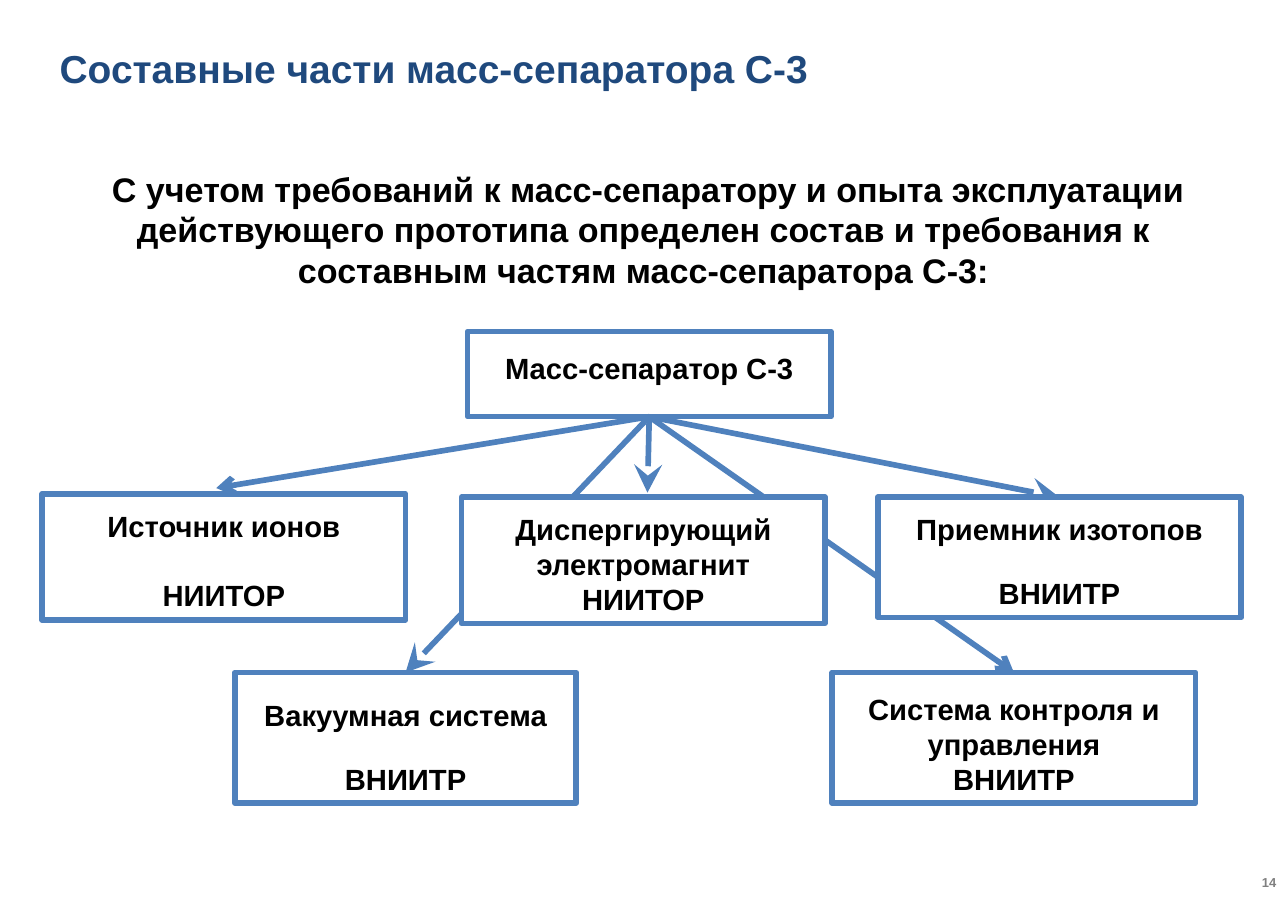
from lxml import etree
from pptx import Presentation
from pptx.dml.color import RGBColor
from pptx.enum.shapes import MSO_CONNECTOR, MSO_SHAPE
from pptx.enum.text import MSO_ANCHOR, PP_ALIGN
from pptx.oxml.ns import qn
from pptx.util import Inches, Pt

LINE, RECT = MSO_CONNECTOR.STRAIGHT, MSO_SHAPE.RECTANGLE
TOP, MIDDLE = MSO_ANCHOR.TOP, MSO_ANCHOR.MIDDLE
LEFT, CENTER, RIGHT = PP_ALIGN.LEFT, PP_ALIGN.CENTER, PP_ALIGN.RIGHT
WIDE, HIGH = Pt(793.8), Pt(567)
COLORS = {"title": "1F497D", "text": "000000", "edge": "4F81BD",
          "fill": "FFFFFF", "number": "808080"}
FONT = {"name": "Arial", "bold": True}
SIDES = ("margin_left", "margin_top", "margin_right", "margin_bottom")
BOX_W = 28.22
ROW = 54.06
LOW = 73.1


def color(key):
    return RGBColor.from_string(COLORS[key])


def place(x, y):
    return round(WIDE * x / 100), round(HIGH * y / 100)


def area(x, y, w, h):
    return place(x, y) + place(w, h)


def style(item, values):
    for name, value in values.items():
        setattr(item, name, value)


def write(shape, lines, size, tint="text", align=CENTER, anchor=TOP,
          pads=(0.1, 0.05, 0.1, 0.05), last=None):
    frame = shape.text_frame
    style(frame, {"word_wrap": True, "vertical_anchor": anchor})
    style(frame, dict(zip(SIDES, map(Inches, pads))))
    frame.text = "\n".join(lines)
    for par in frame.paragraphs:
        par.alignment = align
        for run in par.runs:
            style(run.font, {**FONT, "size": Pt(size)})
            run.font.color.rgb = color(tint)
    style(frame.paragraphs[-1], last or {})


def add_text(slide, spot, lines, size, **look):
    write(slide.shapes.add_textbox(*area(*spot)), lines, size, **look)


def add_box(slide, spot, lines, solid=True, **look):
    box = slide.shapes.add_shape(RECT, *area(*spot))
    box.shadow.inherit = False
    if solid:
        box.fill.solid()
        box.fill.fore_color.rgb = color("fill")
    else:
        box.fill.background()
    box.line.color.rgb = color("edge")
    box.line.width = Pt(3.5)
    write(box, lines, 18, **look)
    return box


def add_arrow(slide, start, goal, head, size):
    free = isinstance(goal, tuple)
    end = goal if free else (0, 0)
    arrow = slide.shapes.add_connector(LINE, 0, 0, *place(*end))
    arrow.begin_connect(start, 2)
    if not free:
        arrow.end_connect(goal, 0)
    arrow.line.color.rgb = color("edge")
    arrow.line.width = Pt(3.5)
    etree.SubElement(arrow.line._ln, qn("a:tailEnd"), type=head, w=size, len=size)
    etree.SubElement(arrow._element.spPr, qn("a:effectLst"))
    slide.shapes._spTree.insert(2, arrow._element)


def main():
    deck = Presentation()
    deck.slide_width = WIDE
    deck.slide_height = HIGH
    slide = deck.slides.add_slide(deck.slide_layouts[6])

    add_text(slide, (3.54, 2.79, 90.02, 9.14), ["Составные части масс-сепаратора С-3"],
             24, tint="title", align=LEFT, anchor=MIDDLE, pads=(0.12, 0.06, 0.12, 0.06))
    add_text(slide, (2.36, 17.64, 95.92, 14.72),
             ["С учетом требований к масс-сепаратору и опыта эксплуатации "
              "действующего прототипа определен состав и требования к ",
              "составным частям масс-сепаратора С-3: "], 21)
    add_text(slide, (93.1, 94.42, 6.9, 5.46), ["14"], 8, tint="number", align=RIGHT)

    pads = (0.11, 0.12, 0.11, 0.05)
    root = add_box(slide, (36.3, 36.04, BOX_W, 9.26), ["Масс-сепаратор С-3"],
                   solid=False, anchor=MIDDLE, pads=(0, 0, 0, 0.1))
    add_box(slide, (3.27, 53.68, BOX_W, 13.71), ["Источник ионов", "НИИТОР"],
            pads=pads, last={"space_before": Pt(21.5)})
    add_box(slide, (35.84, ROW, BOX_W, 13.71),
            ["Диспергирующий электромагнит", "НИИТОР"], pads=pads)
    target = add_box(slide, (68.15, ROW, BOX_W, 13.07), ["Приемник изотопов", "ВНИИТР"],
                     pads=pads, last={"space_before": Pt(18)})
    vacuum = add_box(slide, (18.24, LOW, 26.5, 14.21), ["Вакуумная система", "ВНИИТР"],
                     solid=False, pads=(0.11, 0.21, 0.11, 0.05),
                     last={"space_before": Pt(18)})
    control = add_box(slide, (64.61, LOW, BOX_W, 14.21),
                      ["Система контроля и управления", "ВНИИТР"],
                      pads=(0.11, 0.16, 0.11, 0.05))

    for goal, head, size in (((16.79, 53.05), "arrow", "med"),
                             ((50.27, 53.55), "stealth", "lg"),
                             (target, "stealth", "lg"),
                             (vacuum, "stealth", "lg"),
                             (control, "arrow", "med")):
        add_arrow(slide, root, goal, head, size)
    deck.save("out.pptx")


if __name__ == "__main__":
    main()
